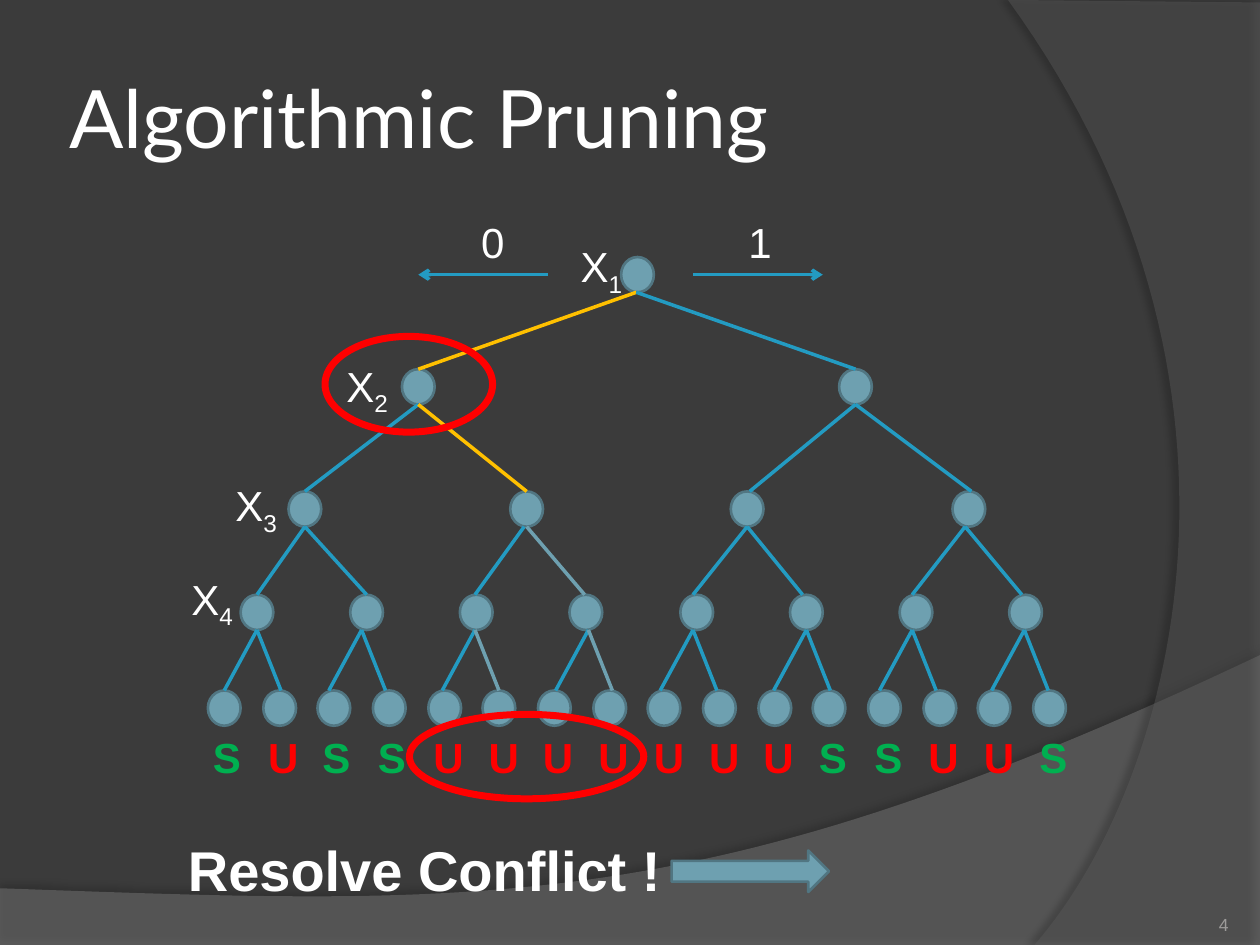
from lxml.etree import SubElement
from pptx import Presentation
from pptx.dml.color import RGBColor
from pptx.enum.shapes import MSO_CONNECTOR as Connector, MSO_SHAPE as Shape
from pptx.enum.text import MSO_ANCHOR as Anchor, PP_ALIGN as Align
from pptx.oxml.ns import qn
from pptx.util import Pt

EMU_PER_PX = 9144
WHITE, RED, GREEN, GOLD = "FFFFFF", "FF0000", "00B050", "FFC000"
BLUE, TEAL, TEAL_EDGE = "239BC2", "6EA0B0", "517682"


def px(length):
    return round(length * EMU_PER_PX)


def color(value):
    return RGBColor.from_string(value)


def add_xml(parent, tag, **attributes):
    return SubElement(parent, qn(tag), {key: str(value) for key, value in attributes.items()})


def bezier(start, first, second, end, steps=60):
    for step in range(1, steps + 1):
        t = step / steps
        weights = ((1 - t) ** 3, 3 * t * (1 - t) ** 2, 3 * t * t * (1 - t), t ** 3)
        yield tuple(sum(weight * point[axis] for weight, point
                        in zip(weights, (start, first, second, end))) for axis in (0, 1))


class SlideBuilder:
    font_name = "Arial"

    def __init__(self, presentation, background):
        self.slide = presentation.slides.add_slide(presentation.slide_layouts[6])
        fill = self.slide.background.fill
        fill.solid()
        fill.fore_color.rgb = color(background)

    def paint(self, shape, fill=None, line=None, line_width=1.5):
        shape.shadow.inherit = False
        for target, value in ((shape.fill, fill), (shape.line.fill, line)):
            if value:
                target.solid()
                target.fore_color.rgb = color(value)
            else:
                target.background()
        if line:
            shape.line.width = Pt(line_width)

    def shape(self, kind, left, top, width, height, **style):
        shape = self.slide.shapes.add_shape(kind, *map(px, (left, top, width, height)))
        self.paint(shape, **style)

    def band(self, points, fill, opacity, shadow_opacity, distance, direction):
        start, *rest = [(px(x), px(y)) for x, y in points]
        builder = self.slide.shapes.build_freeform(*start)
        builder.add_line_segments(rest, close=True)
        shape = builder.convert_to_shape()
        self.paint(shape, fill)
        properties = shape.element.spPr
        add_xml(properties.find(qn("a:solidFill"))[0], "a:alpha", val=opacity * 1000)
        shadow = add_xml(properties.find(qn("a:effectLst")), "a:outerShdw", blurRad=Pt(4),
                         dist=Pt(distance), dir=direction * 60000, rotWithShape=0)
        shadow_color = add_xml(shadow, "a:srgbClr", val="000000")
        add_xml(shadow_color, "a:alpha", val=shadow_opacity * 1000)

    def line(self, start, end, line_color=BLUE, arrow=False):
        connector = self.slide.shapes.add_connector(
            Connector.STRAIGHT, *map(px, (*start, *end)))
        connector.line.color.rgb = color(line_color)
        connector.line.width = Pt(2)
        properties = connector.element.spPr
        if arrow:
            add_xml(properties.find(qn("a:ln")), "a:tailEnd", type="arrow")
        add_xml(properties, "a:effectLst")

    def text(self, words, left, top, width, height, subscript=None, size=24, text_color=WHITE,
             bold=False, font=None, align=Align.LEFT, anchor=Anchor.TOP, inset=(10, 5)):
        box = self.slide.shapes.add_textbox(*map(px, (left, top, width, height)))
        frame = box.text_frame
        across, down = map(px, inset)
        frame_format = {"word_wrap": True, "vertical_anchor": anchor, "margin_left": across,
                        "margin_right": across, "margin_top": down, "margin_bottom": down}
        for name, value in frame_format.items():
            setattr(frame, name, value)
        paragraph = frame.paragraphs[0]
        paragraph.alignment = align
        font_format = {"name": font or self.font_name, "size": Pt(size), "bold": bold}
        for part in filter(None, (words, subscript)):
            run = paragraph.add_run()
            run.text = part
            for name, value in font_format.items():
                setattr(run.font, name, value)
            run.font.color.rgb = color(text_color)
        if subscript:
            run._r.get_or_add_rPr().set("baseline", "-25000")


def draw_background(builder):
    wave = bezier((1000, 520), (559, 729), (391, 719), (0, 705))
    builder.band([(0, 705), (0, 750), (1000, 750), (1000, 520), *wave],
                 "7F7F7F", 45, 35, 3.5, 270)
    arc = bezier((821, 750), (935, 619), (1018, 300), (800, 0))
    builder.band([(1000, 2), (1000, 750), (821, 750), *arc], "5E5E5E", 40, 45, 4, 180)


def draw_tree(builder):
    node_width, node_height = 26, 28
    row_tops = (204, 293, 390, 472, 548)
    row_spans = ((493, 493), (319, 666), (229, 756), (191, 801), (165, 820))
    for level, (top, (first, last)) in enumerate(zip(row_tops, row_spans)):
        count = 2 ** level
        gap = (last - first) / max(count - 1, 1)
        for index in range(count):
            builder.shape(Shape.OVAL, round(first + index * gap), top, node_width, node_height,
                          fill=TEAL, line=TEAL_EDGE)

    lowest_parents = (204, 287, 377, 467, 550, 640, 724, 813)
    edges = (
        ((505, 332), (505, 679)),
        ((332, 242), (332, 418), (679, 595), (679, 771)),
        ((242, 204), (242, 291), (416, 377), (418, 464),
         (593, 550), (593, 637), (766, 724), (766, 811)),
        [(x, x + shift) for x in lowest_parents for shift in (-26, 19)],
    )
    edge_colors = {(0, 0): GOLD, (1, 1): GOLD, (2, 3): TEAL, (3, 5): TEAL, (3, 7): TEAL}
    for level, row in enumerate(edges):
        for index, (parent, child) in enumerate(row):
            builder.line((parent, row_tops[level] + node_height), (child, row_tops[level + 1]),
                         edge_colors.get((level, index), BLUE))


def draw_labels(builder):
    variables = ((451, 186), (265, 281), (177, 376), (142, 450))
    for number, (left, top) in enumerate(variables, 1):
        builder.text("X", left, top, 58, 42, subscript=str(number))
    for digit, left, start, end in (("0", 372, 435, 332), ("1", 584, 550, 653)):
        builder.line((start, 218), (end, 218), arrow=True)
        builder.text(digit, left, 167, 51, 42)
    for index, letter in enumerate("SUSSUUUUUUUSSUUS"):
        builder.text(letter, round(159 + index * 43.73), 576, 35, 58, bold=True,
                     text_color=GREEN if letter == "S" else RED)


def main():
    presentation = Presentation()
    presentation.slide_width, presentation.slide_height = px(1000), px(750)
    builder = SlideBuilder(presentation, "3B3B3B")
    draw_background(builder)
    builder.text("Algorithmic Pruning", 50, 30, 817, 125, size=46, font="Lato",
                 anchor=Anchor.MIDDLE, inset=(5, 5))
    draw_tree(builder)
    draw_labels(builder)
    for highlight in ((325, 567, 186, 67), (258, 267, 133, 76)):
        builder.shape(Shape.OVAL, *highlight, line=RED, line_width=4)
    builder.text("Resolve Conflict !", 133, 658, 408, 64, size=32, bold=True, align=Align.CENTER)
    builder.shape(Shape.RIGHT_ARROW, 533, 675, 125, 33, fill=TEAL, line=TEAL_EDGE)
    builder.text("4", 892, 702, 83, 40, size=10, text_color="9D9B9A", align=Align.RIGHT,
                 anchor=Anchor.BOTTOM, inset=(0, 0))
    presentation.save("out.pptx")


if __name__ == "__main__":
    main()
